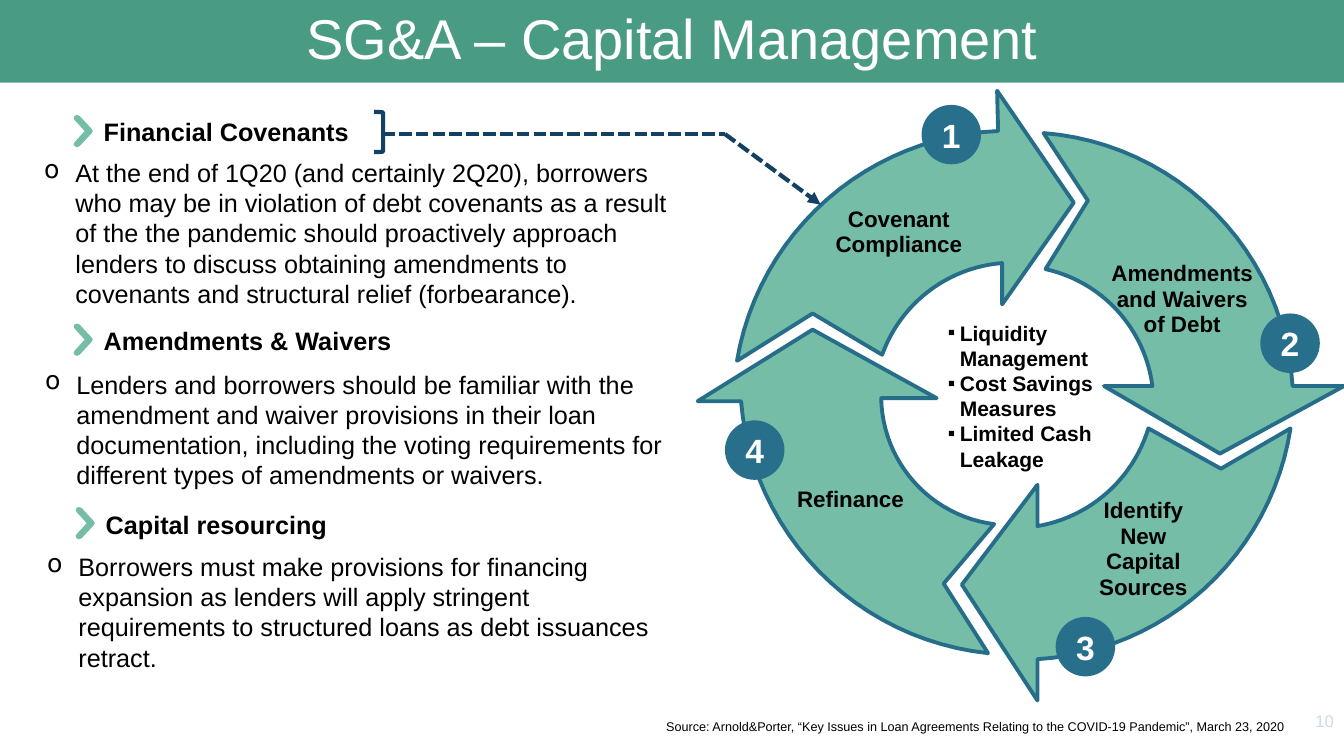
import math

from lxml import etree
from pptx import Presentation
from pptx.dml.color import RGBColor
from pptx.enum.dml import MSO_LINE
from pptx.enum.shapes import MSO_CONNECTOR, MSO_SHAPE
from pptx.enum.text import MSO_ANCHOR, MSO_AUTO_SIZE, PP_ALIGN
from pptx.oxml.ns import qn
from pptx.util import Pt

LEFT, CENTER, RIGHT = PP_ALIGN.LEFT, PP_ALIGN.CENTER, PP_ALIGN.RIGHT
TOP, MIDDLE = MSO_ANCHOR.TOP, MSO_ANCHOR.MIDDLE
DASHED = MSO_LINE.SQUARE_DOT
EMU_PER_PX = 9144  # 100 px to the inch
FONT = "Arial"
COLORS = {
    "banner": "4A9B83", "arrow": "75BDA7", "outline": "266D8A", "badge": "276F8B",
    "callout": "134163", "number": "CEDBE6", "text": "000000", "white": "FFFFFF",
}

TITLE = "SG&A – Capital Management"
SOURCE = ("Source: Arnold&Porter, “Key Issues in Loan Agreements Relating to the "
          "COVID-19 Pandemic”, March 23, 2020")
PAGE_NUMBER = "10"
GOALS = ["Liquidity Management", "Cost Savings Measures", "Limited Cash Leakage"]

# Heading, chevron corner, body box, body text
SECTIONS = [
    ("Financial Covenants", (73, 114), (34, 151, 654, 162),
     "At the end of 1Q20 (and certainly 2Q20), borrowers who may be in violation of debt "
     "covenants as a result of the the pandemic should proactively approach lenders to discuss "
     "obtaining amendments to covenants and structural relief (forbearance)."),
    ("Amendments & Waivers", (73, 321), (35, 361, 650, 131),
     "Lenders and borrowers should be familiar with the amendment and waiver provisions in "
     "their loan documentation, including the voting requirements for different types of "
     "amendments or waivers."),
    ("Capital resourcing", (75, 503), (37, 542, 650, 131),
     "Borrowers must make provisions for financing expansion as lenders will apply stringent "
     "requirements to structured loans as debt issuances retract."),
]
CHEVRON = [(6, 1), (18, 14), (19, 16), (18, 18), (6, 31), (3, 32), (1, 31), (0, 29),
           (1, 27), (11, 16), (1, 5), (0, 3), (1, 1), (3, 0)]

# Each arc is given by its start, a point on the way and its end
STEPS = [
    {"label": "Covenant Compliance", "label_box": (814, 203, 155, 55), "badge": (914, 104),
     "inner": [(875, 352), (921, 289), (994, 261)],
     "head": [(994, 302), (1065, 201), (989, 90)],
     "outer": [(990, 130), (826, 193), (731, 358)], "notch": (806, 311)},
    {"label": "Amendments and Waivers of Debt", "label_box": (1102, 258, 141, 78),
     "badge": (1250, 311),
     "inner": [(1037, 267), (1109, 309), (1143, 383)],
     "head": [(1095, 383), (1210, 450), (1333, 383)],
     "outer": [(1282, 383), (1208, 214), (1035, 132)], "notch": (1079, 199)},
    {"label": "Identify New Capital Sources", "label_box": (1074, 506, 120, 78),
     "badge": (1047, 612),
     "inner": [(1139, 425), (1099, 488), (1029, 522)],
     "head": [(1029, 481), (954, 580), (1029, 695)],
     "outer": [(1029, 654), (1183, 594), (1280, 425)], "notch": (1211, 465)},
    {"label": "Refinance", "label_box": (769, 483, 149, 26), "badge": (719, 417),
     "inner": [(986, 520), (897, 466), (874, 395)],
     "head": [(929, 395), (806, 327), (692, 398)],
     "outer": [(735, 398), (798, 551), (980, 648)], "notch": (936, 579)},
]
BADGE_SIZE = 59
CALLOUT_PATH = [(379, 133), (719, 133), (814, 203)]


def px(*lengths):
    return [round(length * EMU_PER_PX) for length in lengths]


def color(name):
    return RGBColor.from_string(COLORS[name])


def arc(start, middle, end, steps=24):
    """Points of the circular arc through three points."""
    (ax, ay), (bx, by), (cx, cy) = start, middle, end
    a, b, c = ax**2 + ay**2, bx**2 + by**2, cx**2 + cy**2
    d = 2 * (ax * (by - cy) + bx * (cy - ay) + cx * (ay - by))
    x = (a * (by - cy) + b * (cy - ay) + c * (ay - by)) / d
    y = (a * (cx - bx) + b * (ax - cx) + c * (bx - ax)) / d
    first = math.atan2(ay - y, ax - x)
    sweep = math.remainder(math.atan2(cy - y, cx - x) - first, math.tau)
    radius = math.hypot(ax - x, ay - y)
    angles = [first + sweep * i / steps for i in range(steps + 1)]
    return [(x + radius * math.cos(t), y + radius * math.sin(t)) for t in angles]


def paint(shape, fill=None, line=None, width=0):
    shape.shadow.inherit = False
    if fill:
        shape.fill.solid()
        shape.fill.fore_color.rgb = color(fill)
    else:
        shape.fill.background()
    if line:
        shape.line.color.rgb = color(line)
        shape.line.width = Pt(width)
    else:
        shape.line.fill.background()


def outline(slide, points, **look):
    start, *rest = [px(*point) for point in points]
    builder = slide.shapes.build_freeform(*start, scale=1.0)
    builder.add_line_segments(rest, close=True)
    paint(builder.convert_to_shape(), **look)


def write(shape, texts, size, ink="text", bold=False, align=LEFT, anchor=TOP,
          insets=(10, 5, 10, 5), spacing=1.0, bullet=None, indent=0):
    left, top, right, bottom = px(*insets)
    frame = shape.text_frame
    frame_format = {"word_wrap": True, "auto_size": MSO_AUTO_SIZE.NONE,
                    "vertical_anchor": anchor, "margin_left": left, "margin_top": top,
                    "margin_right": right, "margin_bottom": bottom}
    for name, value in frame_format.items():
        setattr(frame, name, value)
    for i, text in enumerate(texts):
        paragraph = frame.add_paragraph() if i else frame.paragraphs[0]
        paragraph_format = {"alignment": align, "line_spacing": spacing, "space_before": Pt(0)}
        for name, value in paragraph_format.items():
            setattr(paragraph, name, value)
        if bullet:
            properties = paragraph._p.get_or_add_pPr()
            hanging = px(indent)[0]
            properties.set("marL", str(hanging))
            properties.set("indent", str(-hanging))
            etree.SubElement(properties, qn("a:buChar")).set("char", bullet)
        run = paragraph.add_run()
        run.text = text
        for name, value in {"name": FONT, "size": Pt(size), "bold": bold}.items():
            setattr(run.font, name, value)
        run.font.color.rgb = color(ink)


def place(shape, box):
    for name, value in zip(("left", "top", "width", "height"), px(*box)):
        setattr(shape, name, value)


def text_box(slide, box, text, size, **look):
    write(slide.shapes.add_textbox(*px(*box)), [text], size, **look)


def add_step(slide, step):
    points = arc(*step["inner"]) + step["head"] + arc(*step["outer"]) + [step["notch"]]
    outline(slide, points, fill="arrow", line="outline", width=2.75)
    text_box(slide, step["label_box"], step["label"], 16, bold=True, align=CENTER,
             anchor=MIDDLE, insets=(0, 0, 0, 0), spacing=0.95)


def add_badge(slide, number, corner):
    badge = slide.shapes.add_shape(MSO_SHAPE.OVAL, *px(*corner, BADGE_SIZE, BADGE_SIZE))
    paint(badge, fill="badge")
    write(badge, [str(number)], 24, ink="white", bold=True, align=CENTER, anchor=MIDDLE,
          insets=(0, 0, 0, 0))


def add_section(slide, heading, corner, body_box, body):
    x, y = corner
    text_box(slide, body_box, body, 18, bullet="o", indent=31)
    text_box(slide, (x + 20, y - 3, 461, 40), heading, 18, bold=True)
    outline(slide, [(x + dx, y + dy) for dx, dy in CHEVRON], fill="arrow")


def add_callout(slide):
    bracket = slide.shapes.add_shape(MSO_SHAPE.RIGHT_BRACKET, *px(371, 111, 9, 40))
    paint(bracket, line="callout", width=3)
    for start, end in zip(CALLOUT_PATH, CALLOUT_PATH[1:]):
        connector = slide.shapes.add_connector(MSO_CONNECTOR.STRAIGHT, *px(*start, *end))
        connector.line.color.rgb = color("callout")
        connector.line.width = Pt(3)
        connector.line.dash_style = DASHED
        etree.SubElement(connector._element.spPr, qn("a:effectLst"))
    # The last segment carries the arrowhead
    etree.SubElement(connector.line._get_or_add_ln(), qn("a:tailEnd")).set("type", "triangle")


def main():
    presentation = Presentation()
    presentation.slide_width, presentation.slide_height = px(1333, 750)
    slide = presentation.slides.add_slide(presentation.slide_layouts[1])
    title, goals = slide.placeholders

    place(title, (0, -5, 1333, 87))
    title.fill.solid()
    title.fill.fore_color.rgb = color("banner")
    write(title, [TITLE], 40, ink="white", align=CENTER, anchor=MIDDLE,
          insets=(10, 5, 10, 0), spacing=0.9)
    place(goals, (930, 311, 195, 163))
    write(goals, GOALS, 15, bold=True, anchor=MIDDLE, bullet="▪", indent=12)

    for step in STEPS:
        add_step(slide, step)
    for number, step in enumerate(STEPS, 1):
        add_badge(slide, number, step["badge"])
    for section in SECTIONS:
        add_section(slide, *section)
    add_callout(slide)
    text_box(slide, (651, 708, 650, 25), SOURCE, 9)
    text_box(slide, (1252, 695, 81, 40), PAGE_NUMBER, 12, ink="number", align=RIGHT,
             anchor=MIDDLE)
    presentation.save("out.pptx")


if __name__ == "__main__":
    main()
